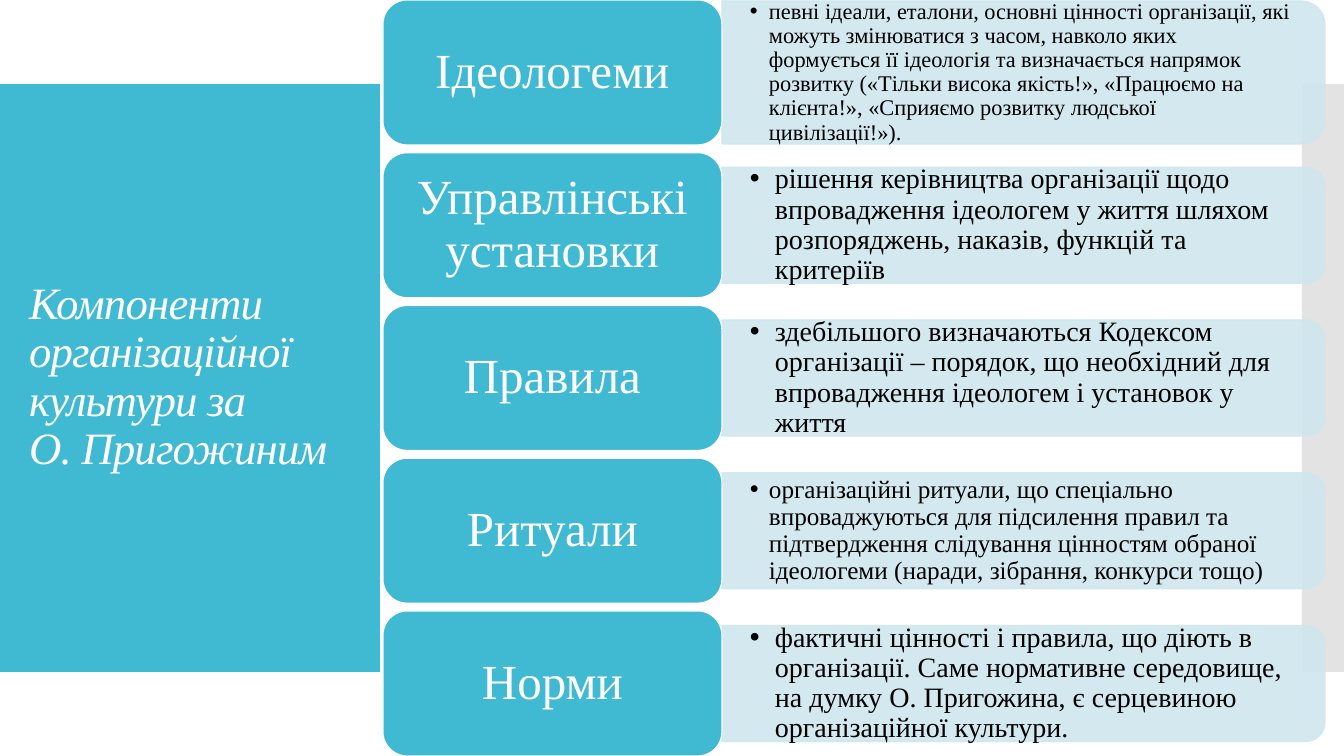
from pptx import Presentation
from pptx.dml.color import RGBColor
from pptx.enum.shapes import MSO_SHAPE
from pptx.enum.text import MSO_ANCHOR, MSO_AUTO_SIZE, PP_ALIGN
from pptx.oxml.ns import qn
from pptx.util import Emu, Pt
from lxml.etree import SubElement

TITLE = "Компоненти організаційної культури за \vО. Пригожиним"
# label, description, text size, bullet indent, bar height
ROWS = [
    ("Ідеологеми", "певні ідеали, еталони, основні цінності організації, які можуть змінюватися з часом, навколо яких формується її ідеологія та визначається напрямок розвитку («Тільки висока якість!», «Працюємо на клієнта!», «Сприяємо розвитку людської цивілізації!»).", 16, 19, 143),
    ("Управлінські установки", "рішення керівництва організації щодо впровадження ідеологем у життя шляхом розпоряджень, наказів, функцій та критеріїв", 20, 25, 116),
    ("Правила", "здебільшого визначаються Кодексом організації – порядок, що необхідний для впровадження ідеологем і установок у життя", 20, 25, 116),
    ("Ритуали", "організаційні ритуали, що спеціально впроваджуються для підсилення правил та підтвердження слідування цінностям обраної ідеологеми (наради, зібрання, конкурси тощо)", 18, 19, 116),
    ("Норми", "фактичні цінності і правила, що діють в організації. Саме нормативне середовище, на думку О. Пригожина, є серцевиною організаційної культури.", 20, 25, 116),
]
COLORS = {"teal": "40BAD2", "gray": "C8C8C8", "pale": "CFE7EE", "white": "FFFFFF", "black": "000000"}
FONT = "Times New Roman"
SLIDE_W, SLIDE_H = 1344, 756
PANEL_Y, PANEL_H = 84, 588
LABEL_X, LABEL_W, LABEL_H = 383, 339, 145
BAR_X, BAR_W = 722, 603


def px(n):
    return Emu(round(n * 914400 / 100.8))


def rgb(name):
    return RGBColor.from_string(COLORS[name])


def set_alpha(fill_xml, percent):
    SubElement(fill_xml.find(".//" + qn("a:srgbClr")), qn("a:alpha"), val=str(percent * 1000))


def add_box(s, kind, box, fill, line=None, alpha=None):
    sp = s.shapes.add_shape(kind, *map(px, box))
    sp.shadow.inherit = False
    sp.fill.solid()
    sp.fill.fore_color.rgb = rgb(fill)
    if line:
        sp.line.color.rgb = rgb(line)
        sp.line.width = Pt(0.85)
    else:
        sp.line.fill.background()
    if alpha:
        pr = sp._element.spPr
        set_alpha(pr.find(qn("a:solidFill")), alpha)
        if line:
            set_alpha(pr.find(qn("a:ln")), alpha)
    return sp


def write(sp, text, size, color, align, inset_x, inset_y=0, italic=False):
    tf = sp.text_frame
    frame = {"word_wrap": True, "auto_size": MSO_AUTO_SIZE.NONE, "vertical_anchor": MSO_ANCHOR.MIDDLE,
             "margin_left": px(inset_x), "margin_right": px(inset_x),
             "margin_top": px(inset_y), "margin_bottom": px(inset_y)}
    for key, value in frame.items():
        setattr(tf, key, value)
    tf.text = text
    p = tf.paragraphs[0]
    p.alignment, p.line_spacing = align, 0.9
    for r in p.runs:
        for key, value in {"name": FONT, "size": Pt(size), "italic": italic}.items():
            setattr(r.font, key, value)
        r.font.color.rgb = rgb(color)
    return p


def add_bullet(p, indent):
    pr = p._p.get_or_add_pPr()
    pr.set("marL", str(px(indent)))
    pr.set("indent", str(-px(indent)))
    SubElement(pr, qn("a:buFont"), typeface="Arial")
    SubElement(pr, qn("a:buChar"), char="•")


def add_row(s, i, label, text, size, indent, bar_h):
    top = i * (SLIDE_H - LABEL_H) / (len(ROWS) - 1)
    mid = top + LABEL_H / 2
    bar = add_box(s, MSO_SHAPE.ROUND_2_SAME_RECTANGLE,
                  (BAR_X + (BAR_W - bar_h) / 2, mid - BAR_W / 2, bar_h, BAR_W), "pale", "pale", 90)
    bar.rotation = 90
    tb = s.shapes.add_textbox(*map(px, (BAR_X + 1, mid - bar_h / 2, BAR_W - 7, bar_h)))
    add_bullet(write(tb, text, size, "black", PP_ALIGN.LEFT, 27), indent)
    sp = add_box(s, MSO_SHAPE.ROUNDED_RECTANGLE, (LABEL_X, top, LABEL_W, LABEL_H), "teal", "white")
    write(sp, label, 35, "white", PP_ALIGN.CENTER, 22, 14)


def main():
    prs = Presentation()
    prs.slide_width, prs.slide_height = px(SLIDE_W), px(SLIDE_H)
    s = prs.slides.add_slide(prs.slide_layouts[5])
    add_box(s, MSO_SHAPE.RECTANGLE, (0, PANEL_Y, 380, PANEL_H), "teal")
    edge = add_box(s, MSO_SHAPE.RECTANGLE, (1302, PANEL_Y, 42, PANEL_H), "gray", alpha=50)

    title = s.shapes.title
    title.left, title.top, title.width, title.height = map(px, (19, 124, 344, 507))
    p = write(title, TITLE, 32, "white", PP_ALIGN.LEFT, 10, 5, italic=True)
    for r in p.runs:
        r.font._element.set("spc", "-60")
    edge._element.addnext(title._element)

    for i, row in enumerate(ROWS):
        add_row(s, i, *row)
    prs.save("out.pptx")


if __name__ == "__main__":
    main()
